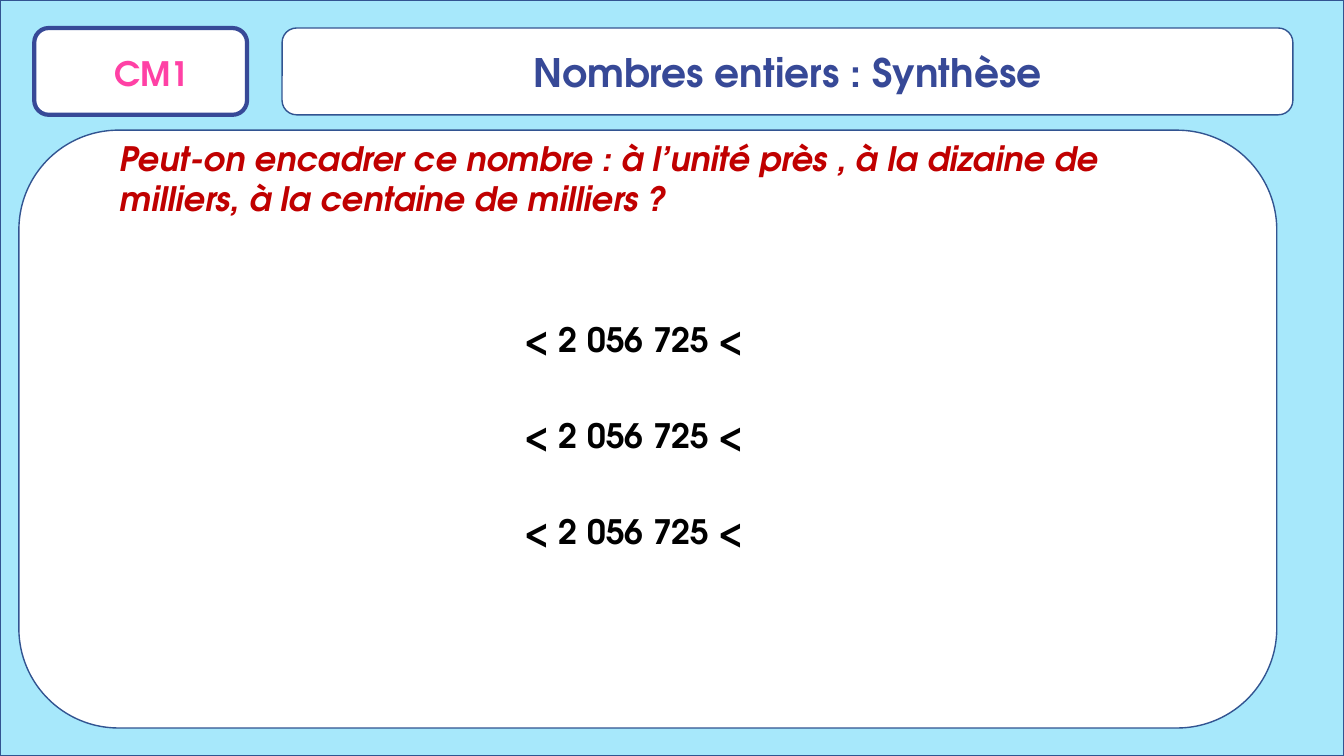
"""Build a maths slide on framing a whole number at three levels of precision."""
from pptx import Presentation
from pptx.dml.color import RGBColor
from pptx.enum import shapes, text
from pptx.util import Pt

SKY = RGBColor(0xA7, 0xE8, 0xFB)
WHITE = RGBColor(0xFF, 0xFF, 0xFF)
BLUE = RGBColor(0x32, 0x54, 0x91)
INDIGO = RGBColor(0x37, 0x49, 0x97)
PINK = RGBColor(0xFF, 0x41, 0xA5)
RED = RGBColor(0xC0, 0x00, 0x00)
BLACK = RGBColor(0x00, 0x00, 0x00)

RECTANGLE = shapes.MSO_SHAPE.RECTANGLE
ROUNDED = shapes.MSO_SHAPE.ROUNDED_RECTANGLE
LEFT = text.PP_ALIGN.LEFT
CENTER = text.PP_ALIGN.CENTER


def write(frame, words, size=24, color=BLACK, italic=False, align=CENTER,
          font="TeX Gyre Adventor"):
    """Put one bold formatted paragraph in a text frame."""
    frame.word_wrap = True
    paragraph = frame.paragraphs[0]
    paragraph.alignment = align
    run = paragraph.add_run()
    run.text = words
    run.font.name = font
    run.font.size = Pt(size)
    run.font.bold = True
    run.font.italic = italic
    run.font.color.rgb = color


class LessonSlide:
    """Hold the current slide and its shared style."""

    def __init__(self, slide):
        """Keep the slide to draw on."""
        self.slide = slide

    def panel(self, left, top, width, height, kind=ROUNDED, fill=WHITE,
              line=BLUE, weight=1):
        """Add a filled, outlined shape."""
        shape = self.slide.shapes.add_shape(
            kind, Pt(left), Pt(top), Pt(width), Pt(height))
        shape.shadow.inherit = False
        shape.fill.solid()
        shape.fill.fore_color.rgb = fill
        shape.line.color.rgb = line
        shape.line.width = Pt(weight)
        return shape

    def label(self, left, top, width, height, words, **style):
        """Add a text box that grows with its words."""
        box = self.slide.shapes.add_textbox(
            Pt(left), Pt(top), Pt(width), Pt(height))
        write(box.text_frame, words, **style)
        box.text_frame.auto_size = text.MSO_AUTO_SIZE.SHAPE_TO_FIT_TEXT


def main():
    """Draw the slide and save it."""
    presentation = Presentation()
    presentation.slide_width, presentation.slide_height = Pt(960), Pt(540)
    lesson = LessonSlide(
        presentation.slides.add_slide(presentation.slide_layouts[6]))

    lesson.panel(0, 0, 960, 540, kind=RECTANGLE, fill=SKY)
    lesson.panel(24.5, 20, 152, 62, line=INDIGO, weight=3)
    lesson.label(32.5, 34, 152, 36, "CM1", color=PINK)

    title = lesson.panel(201.5, 20, 722, 62)
    title.text_frame.vertical_anchor = text.MSO_ANCHOR.MIDDLE
    write(title.text_frame, "Nombres entiers : Synthèse", size=28, color=INDIGO)

    lesson.panel(13.5, 93, 898.5, 427)
    lesson.label(
        78.5, 95, 769.5, 65.5,
        "Peut-on encadrer ce nombre : à l’unité près , à la dizaine de "
        "milliers, à la centaine de milliers ?",
        color=RED, italic=True, align=LEFT)

    for row in range(3):
        lesson.label(224, 224.5 + 68.5 * row, 458, 36, "< 2 056 725 <")

    presentation.save("out.pptx")


if __name__ == "__main__":
    main()
